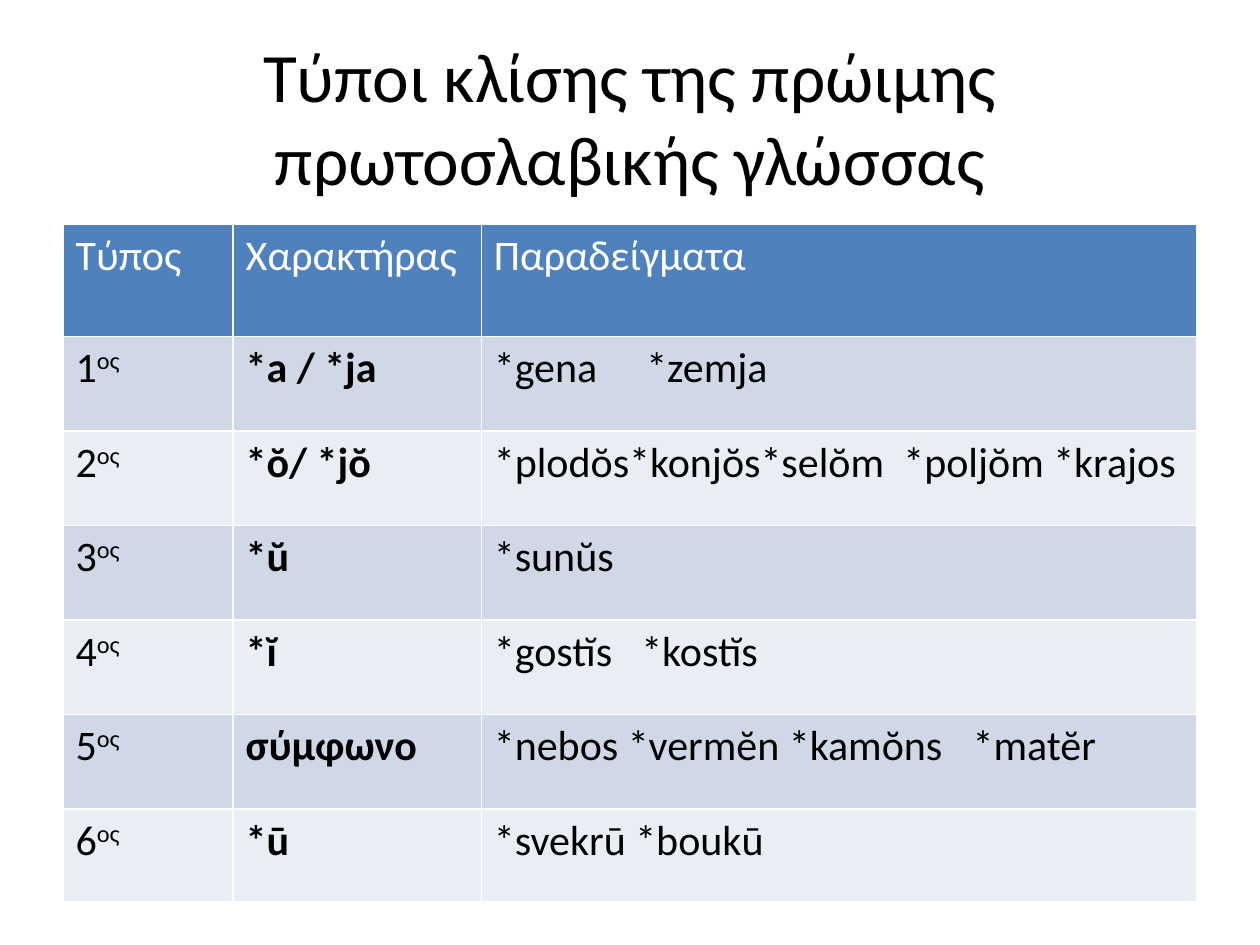
import pptx
import pptx.dml.color
import pptx.enum.text
import pptx.oxml.ns
import pptx.util
import lxml.etree

Inches = pptx.util.Inches
RGBColor = pptx.dml.color.RGBColor

BLACK = RGBColor(0x00, 0x00, 0x00)
WHITE = RGBColor(0xFF, 0xFF, 0xFF)
HEADER_BLUE = RGBColor(0x4F, 0x81, 0xBD)
BAND_COLOURS = (RGBColor(0xD0, 0xD8, 0xE8), RGBColor(0xE9, 0xED, 0xF4))

FONT = "Calibri"
TITLE = "Τύποι κλίσης της πρώιμης πρωτοσλαβικής γλώσσας"
HEADINGS = ("Τύπος", "Χαρακτήρας", "Παραδείγματα")
DECLENSIONS = (
    ("*a / *ja", "*gena\t*zemja", 1.21),
    ("*ŏ/ *jŏ", "*plodŏs*konjŏs*selŏm\t*poljŏm *krajos", 3.25),
    ("*ŭ", "*sunŭs", None),
    ("*ĭ", "*gostĭs\t*kostĭs", 1.17),
    ("σύμφωνο", "*nebos *vermĕn *kamŏns\t*matĕr", 3.8),
    ("*ū", "*svekrū *boukū", None),
)
COLUMN_WIDTHS = (1.35, 1.97, 5.68)
ROW_HEIGHTS = (0.89, 0.75, 0.75, 0.75, 0.75, 0.75, 0.74)


def format_span(span, size, colour, bold=False):
    span.font.name = FONT
    span.font.size = pptx.util.Pt(size)
    span.font.color.rgb = colour
    span.font.bold = bold


def add_title(page):
    box = page.shapes.title
    box.left, box.top = Inches(0.5), Inches(0.3)
    box.width, box.height = Inches(9), Inches(1.25)
    frame = box.text_frame
    frame.text = TITLE
    frame.word_wrap = True
    frame.vertical_anchor = pptx.enum.text.MSO_ANCHOR.MIDDLE
    para = frame.paragraphs[0]
    para.alignment = pptx.enum.text.PP_ALIGN.CENTER
    format_span(para.runs[0], 39.6, BLACK)


def fill_cell(cell, text, fill, colour, bold=False):
    cell.fill.solid()
    cell.fill.fore_color.rgb = fill
    para = cell.text_frame.paragraphs[0]
    para.text = text
    format_span(para.runs[0], 24, colour, bold)
    return para


def add_ordinal_ending(para):
    span = para.add_run()
    span.text = "ος"
    format_span(span, 24, BLACK)
    span.font._element.set("baseline", "30000")


def add_tab_stop(para, position):
    properties = para._p.get_or_add_pPr()
    stops = lxml.etree.SubElement(properties, pptx.oxml.ns.qn("a:tabLst"))
    stop = lxml.etree.SubElement(stops, pptx.oxml.ns.qn("a:tab"))
    stop.set("pos", str(Inches(position)))
    stop.set("algn", "l")


def add_declension_table(page):
    table = page.shapes.add_table(
        len(ROW_HEIGHTS), len(COLUMN_WIDTHS),
        Inches(0.5), Inches(1.78), Inches(9), Inches(sum(ROW_HEIGHTS)),
    ).table
    for column, width in zip(table.columns, COLUMN_WIDTHS):
        column.width = Inches(width)
    for row, height in zip(table.rows, ROW_HEIGHTS):
        row.height = Inches(height)
    for column, heading in enumerate(HEADINGS):
        fill_cell(table.cell(0, column), heading, HEADER_BLUE, WHITE)
    for number, (ending, examples, tab) in enumerate(DECLENSIONS, 1):
        fill = BAND_COLOURS[(number - 1) % 2]
        add_ordinal_ending(fill_cell(table.cell(number, 0), str(number), fill, BLACK))
        fill_cell(table.cell(number, 1), ending, fill, BLACK, bold=True)
        para = fill_cell(table.cell(number, 2), examples, fill, BLACK)
        if tab:
            add_tab_stop(para, tab)


def main():
    deck = pptx.Presentation()
    deck.slide_width, deck.slide_height = Inches(10), Inches(7.5)
    page = deck.slides.add_slide(deck.slide_layouts[5])
    add_title(page)
    add_declension_table(page)
    deck.save("out.pptx")


if __name__ == "__main__":
    main()
